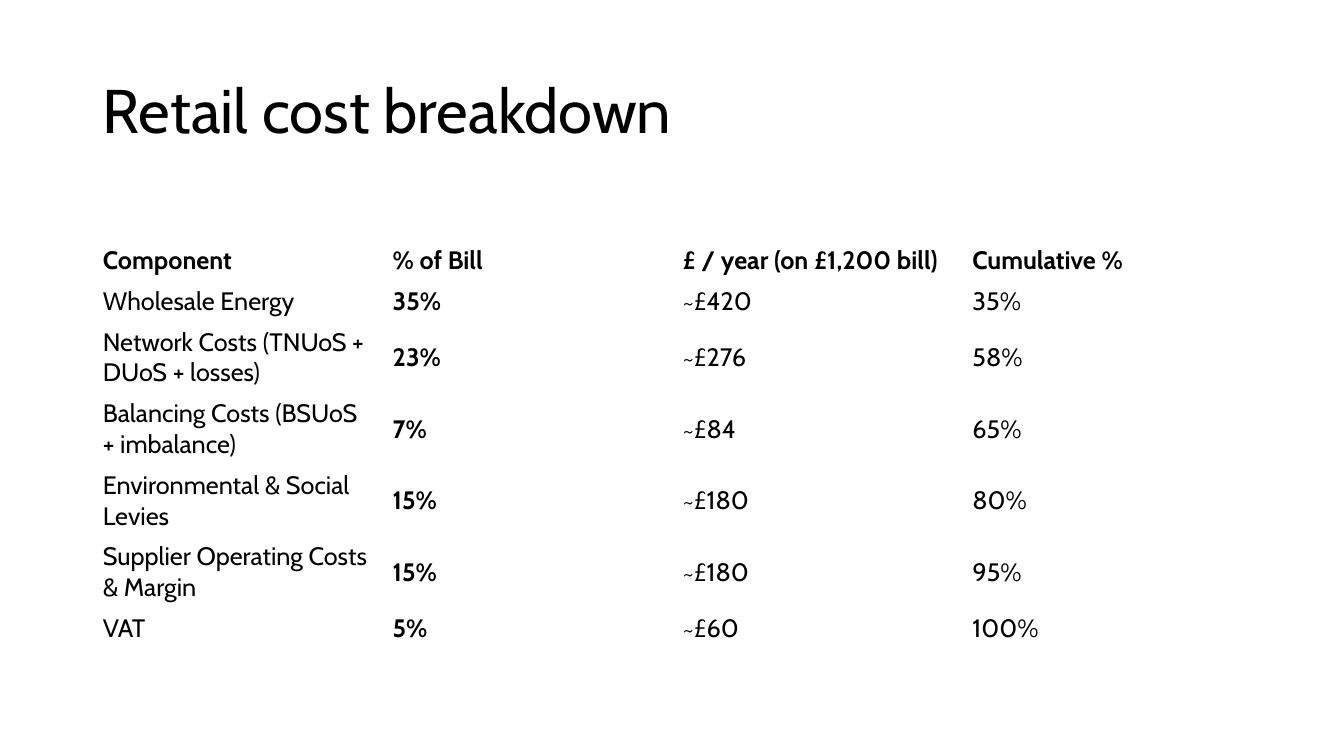
from pptx import Presentation
from pptx.dml.color import RGBColor
from pptx.enum.text import MSO_ANCHOR, PP_ALIGN
from pptx.util import Inches, Pt

TITLE = "Retail cost breakdown"
ROWS = [
    ("Component", "% of Bill", "£ / year (on £1,200 bill)", "Cumulative %"),
    ("Wholesale Energy", "35%", "~£420", "35%"),
    ("Network Costs (TNUoS + DUoS + losses)", "23%", "~£276", "58%"),
    ("Balancing Costs (BSUoS + imbalance)", "7%", "~£84", "65%"),
    ("Environmental & Social Levies", "15%", "~£180", "80%"),
    ("Supplier Operating Costs & Margin", "15%", "~£180", "95%"),
    ("VAT", "5%", "~£60", "100%"),
]
FONT = "Cabin"
BLACK = RGBColor(0, 0, 0)
WIDE, HIGH = Inches(13.33), Inches(7.5)
LEFT, SPAN = Inches(0.92), Inches(11.5)
LINE, PAD = 0.3, 0.1   # inches: one line of text, both cell margins
FIT = 25               # characters that fit on one line of a cell
SHARE = 1              # index of the bold column


def write(frame, text, size=18, bold=False, space=1.0):
    para = frame.paragraphs[0]
    para.alignment = PP_ALIGN.LEFT
    para.line_spacing = space
    run = para.add_run()
    run.text = text
    font = run.font
    font.name, font.size, font.bold = FONT, Pt(size), bold
    font.color.rgb = BLACK


def add_title(slide):
    title = slide.shapes.title
    title.left, title.top = LEFT, Inches(0.4)
    title.width, title.height = SPAN, Inches(1.45)
    title.text_frame.vertical_anchor = MSO_ANCHOR.MIDDLE
    write(title.text_frame, TITLE, size=44, space=0.9)


def add_costs(slide):
    count = len(ROWS[0])
    lines = [2 if len(row[0]) > FIT else 1 for row in ROWS]
    highs = [Inches(PAD + LINE * n) for n in lines]
    frame = slide.shapes.add_table(
        len(ROWS), count, LEFT, Inches(2.38), SPAN, sum(highs))
    table = frame.table
    table.horz_banding = False
    for col in table.columns:
        col.width = SPAN // count
    for r, row in enumerate(ROWS):
        table.rows[r].height = highs[r]
        for c, text in enumerate(row):
            cell = table.cell(r, c)
            cell.fill.background()
            cell.vertical_anchor = MSO_ANCHOR.MIDDLE
            write(cell.text_frame, text, bold=r == 0 or c == SHARE)


def main():
    deck = Presentation()
    deck.slide_width, deck.slide_height = WIDE, HIGH
    slide = deck.slides.add_slide(deck.slide_layouts.get_by_name("Title Only"))
    add_title(slide)
    add_costs(slide)
    deck.save("out.pptx")


if __name__ == "__main__":
    main()
